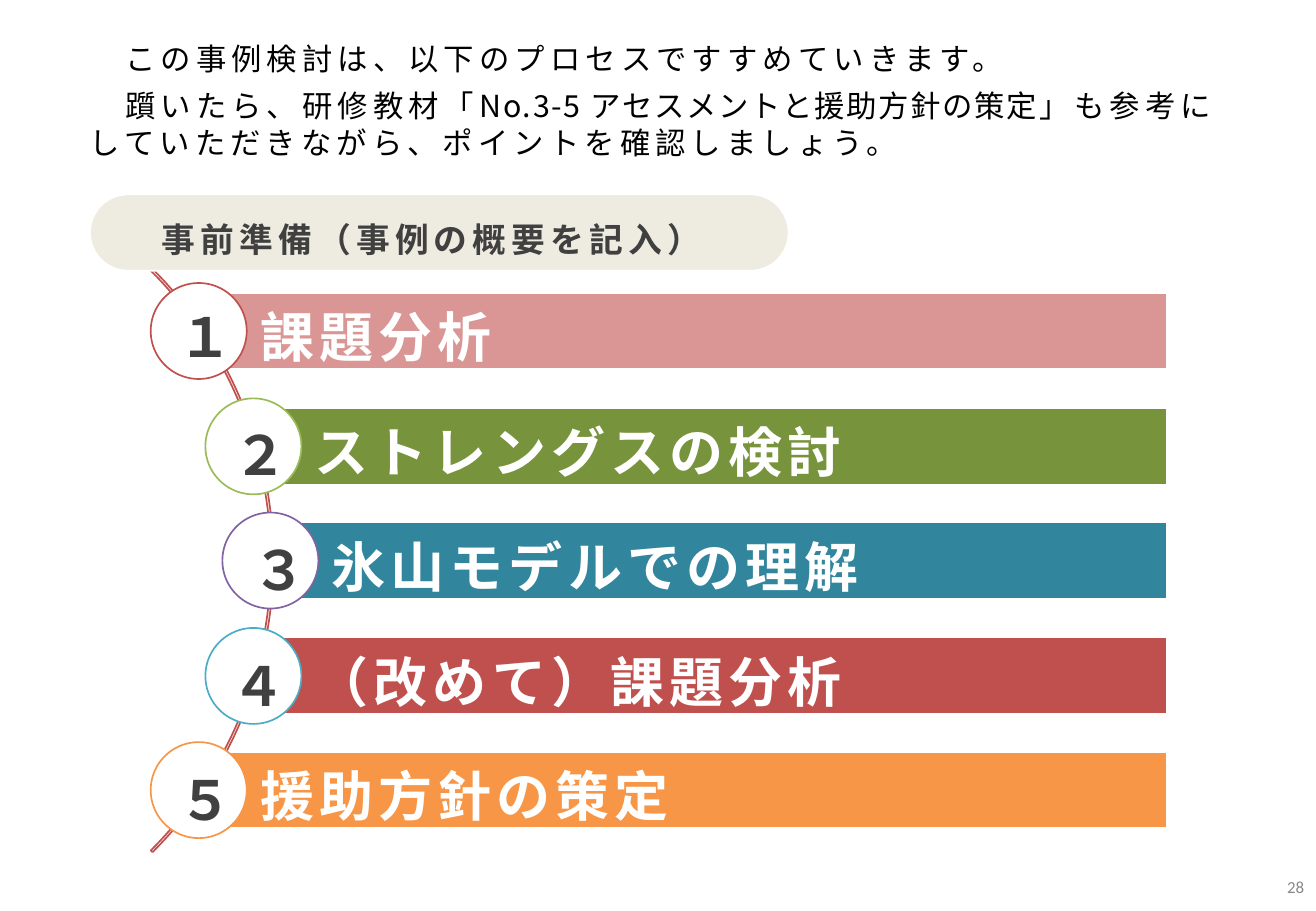
from dataclasses import dataclass

from lxml import etree
from pptx import Presentation
from pptx import util as u
from pptx.dml.color import RGBColor
from pptx.enum import shapes, text
from pptx.oxml import ns
from pptx.shapes.autoshape import Shape
from pptx.slide import Slide

PX = 9144
JAPANESE_FONT = "Noto Sans CJK JP"
NUMBER_FONT = "Calibri"

WHITE = RGBColor(0xFF, 0xFF, 0xFF)
BLACK = RGBColor(0x00, 0x00, 0x00)
DARK_GRAY = RGBColor(0x40, 0x40, 0x40)
PAGE_GRAY = RGBColor(0x89, 0x89, 0x89)
BEIGE = RGBColor(0xEE, 0xEC, 0xE1)
PINK = RGBColor(0xD9, 0x96, 0x94)
RED = RGBColor(0xC0, 0x50, 0x4D)
OLIVE = RGBColor(0x77, 0x93, 0x3C)
GREEN = RGBColor(0x9B, 0xBB, 0x59)
TEAL = RGBColor(0x31, 0x85, 0x9C)
PURPLE = RGBColor(0x80, 0x64, 0xA2)
AQUA = RGBColor(0x4B, 0xAC, 0xC6)
ORANGE = RGBColor(0xF7, 0x96, 0x46)

BAR_RIGHT = 960
BAR_HEIGHT = 63
FIRST_BAR_TOP = 241
TWO_BAR_PITCH = 189
CIRCLE_SIZE = 79
LABEL_INSETS = (50, 24, 9, 9)


@dataclass(frozen=True)
class Box:
    left: int
    top: int
    width: int
    height: int

    def emu(self) -> tuple[int, int, int, int]:
        return self.left * PX, self.top * PX, self.width * PX, self.height * PX


@dataclass(frozen=True)
class Step:
    number: str
    title: str
    bar_left: int
    bar_color: RGBColor
    ring_color: RGBColor
    number_left: int
    number_top: int


STEPS = [
    Step("１", "課題分析", 164, PINK, RED, 137, 245),
    Step("２", "ストレングスの検討", 209, OLIVE, GREEN, 182, 342),
    Step("３", "氷山モデルでの理解", 223, TEAL, PURPLE, 198, 437),
    Step("４", "（改めて）課題分析", 209, RED, AQUA, 181, 532),
    Step("５", "援助方針の策定", 164, ORANGE, ORANGE, 137, 626),
]


def write(paragraph, words: str, *, size: int, color: RGBColor, bold: bool = False,
          font: str = JAPANESE_FONT, spacing: int = 3) -> None:
    run = paragraph.add_run()
    run.text = words
    run.font.size = u.Pt(size)
    run.font.bold = bold
    run.font.color.rgb = color
    run.font.name = font
    properties = run.font._element
    properties.set("spc", str(spacing * 100))
    east_asian = etree.SubElement(properties, ns.qn("a:ea"))
    east_asian.set("typeface", font)


def add_text_area(slide: Slide, box: Box, anchor=text.MSO_ANCHOR.TOP):
    frame = slide.shapes.add_textbox(*box.emu()).text_frame
    frame.word_wrap = True
    frame.vertical_anchor = anchor
    return frame


def add_outlined(slide: Slide, kind, box: Box, line: RGBColor,
                 fill: RGBColor | None = None) -> Shape:
    shape = slide.shapes.add_shape(kind, *box.emu())
    shape.shadow.inherit = False
    if fill is None:
        shape.fill.background()
    else:
        shape.fill.solid()
        shape.fill.fore_color.rgb = fill
    shape.line.color.rgb = line
    shape.line.width = u.Pt(1)
    return shape


def label(shape: Shape, words: str, size: int, color: RGBColor) -> None:
    frame = shape.text_frame
    frame.word_wrap = True
    frame.vertical_anchor = text.MSO_ANCHOR.MIDDLE
    (frame.margin_left, frame.margin_top,
     frame.margin_right, frame.margin_bottom) = (inset * PX for inset in LABEL_INSETS)
    paragraph = frame.paragraphs[0]
    paragraph.alignment = text.PP_ALIGN.LEFT
    paragraph.line_spacing = 0.9
    write(paragraph, words, size=size, color=color, bold=True)


def add_introduction(slide: Slide) -> None:
    frame = add_text_area(slide, Box(64, 28, 955, 109), text.MSO_ANCHOR.MIDDLE)
    opening, advice = frame.paragraphs[0], frame.add_paragraph()
    for paragraph in (opening, advice):
        paragraph.space_before = u.Pt(6)
        paragraph.line_spacing = u.Pt(22)
    write(opening, "　この事例検討は、以下のプロセスですすめていきます。", size=18, color=BLACK)
    for words, spacing in (
        ("　躓いたら、研修教材「", 3),
        ("No.3-5 アセスメントと援助方針の策定", 1),
        ("」も参考にしていただきながら、ポイントを確認しましょう。", 3),
    ):
        write(advice, words, size=18, color=BLACK, spacing=spacing)


def add_step_bar(slide: Slide, step: Step, top: int) -> None:
    bar_box = Box(step.bar_left, top, BAR_RIGHT - step.bar_left, BAR_HEIGHT)
    bar = add_outlined(slide, shapes.MSO_SHAPE.RECTANGLE, bar_box, WHITE, step.bar_color)
    label(bar, step.title, 32, WHITE)
    circle_box = Box(step.bar_left - 40, top - 8, CIRCLE_SIZE, CIRCLE_SIZE)
    add_outlined(slide, shapes.MSO_SHAPE.OVAL, circle_box, step.ring_color, WHITE)


def add_step_number(slide: Slide, step: Step) -> None:
    frame = add_text_area(slide, Box(step.number_left, step.number_top, 58, 64))
    paragraph = frame.paragraphs[0]
    paragraph.alignment = text.PP_ALIGN.CENTER
    write(paragraph, step.number, size=32, color=DARK_GRAY, bold=True)


def main() -> None:
    deck = Presentation()
    deck.slide_width, deck.slide_height = 1083 * PX, 750 * PX
    slide = deck.slides.add_slide(deck.slide_layouts[6])

    page = add_text_area(slide, Box(1042, 710, 41, 40), text.MSO_ANCHOR.MIDDLE).paragraphs[0]
    page.alignment = text.PP_ALIGN.RIGHT
    write(page, "28", size=10, color=PAGE_GRAY, font=NUMBER_FONT, spacing=0)

    add_introduction(slide)

    arc = add_outlined(slide, shapes.MSO_SHAPE.BLOCK_ARC, Box(-454, 122, 679, 679), RED)
    for index, value in enumerate((189, 27, 0.003)):
        arc.adjustments[index] = value

    for index, step in enumerate(STEPS):
        add_step_bar(slide, step, FIRST_BAR_TOP + (TWO_BAR_PITCH * index + 1) // 2)
    for step in STEPS:
        add_step_number(slide, step)

    preparation = add_outlined(slide, shapes.MSO_SHAPE.ROUNDED_RECTANGLE,
                               Box(74, 160, 575, 63), WHITE, BEIGE)
    preparation.adjustments[0] = 0.5
    label(preparation, "事前準備（事例の概要を記入）", 20, DARK_GRAY)

    deck.save("out.pptx")


if __name__ == "__main__":
    main()
